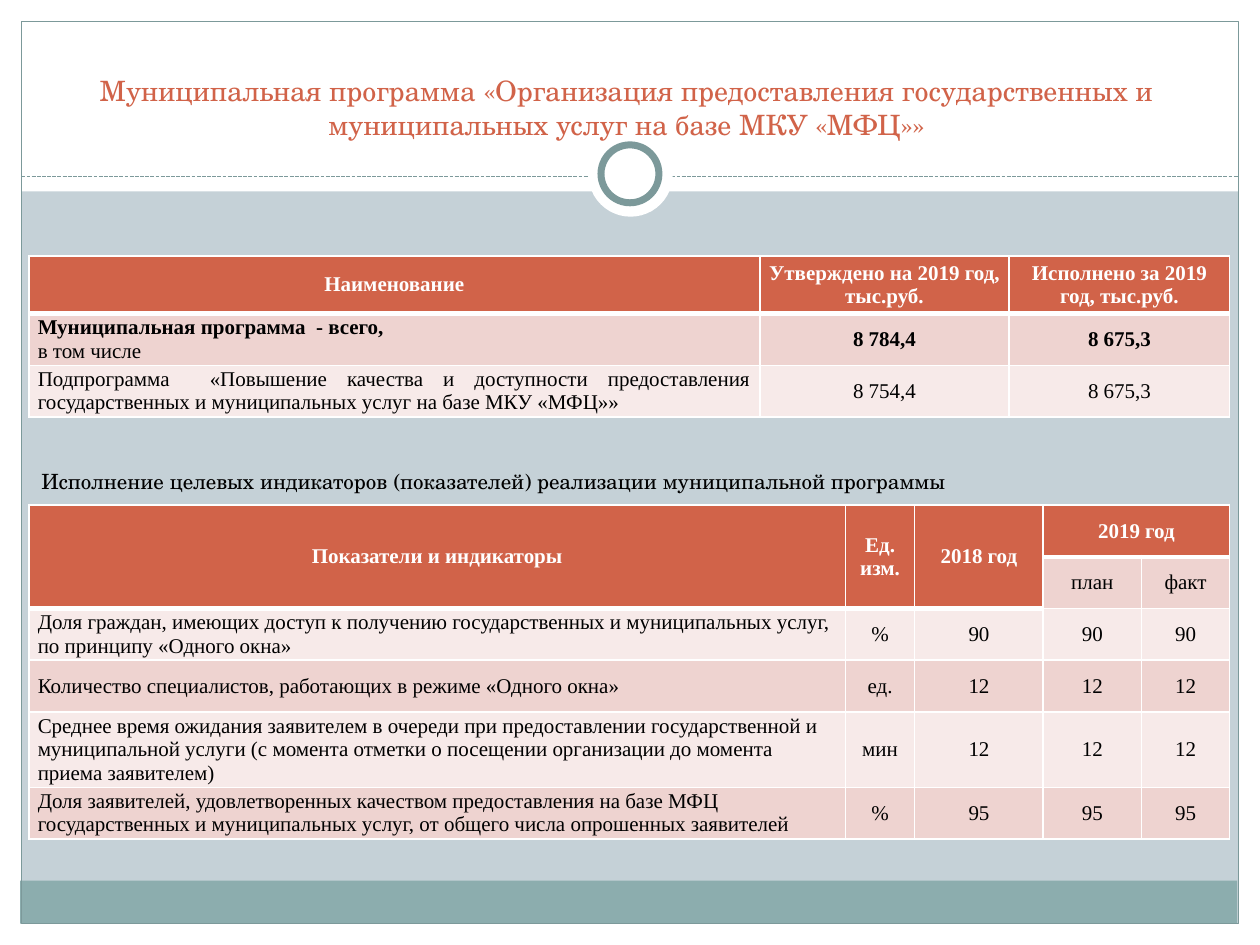
from dataclasses import dataclass, field
from typing import Optional

from lxml import etree
from pptx import Presentation
from pptx.dml.color import RGBColor
from pptx.enum import dml, shapes, text
from pptx.oxml.ns import qn
from pptx.util import Inches, Pt

COLORS = {
    "background": "C5D1D7",
    "white": "FFFFFF",
    "black": "000000",
    "band": "8CADAE",
    "outline": "7C999A",
    "accent": "D16349",
    "odd_row": "EED3D0",
    "even_row": "F7EAE9",
}
HEADING_FONT = "TeX Gyre Schola"
TABLE_FONT = "Times New Roman"
RECT = shapes.MSO_SHAPE.RECTANGLE
OVAL = shapes.MSO_SHAPE.OVAL
ALIGN = text.PP_ALIGN
ANCHOR = text.MSO_ANCHOR


@dataclass
class Panel:
    left: float
    top: float
    width: float
    height: float
    fill: Optional[str] = None
    line: Optional[str] = None
    line_width: float = 0.75
    kind: shapes.MSO_SHAPE = RECT


@dataclass
class Heading:
    words: str
    left: float
    top: float
    width: float
    height: float
    size: float
    color: str
    align: ALIGN = ALIGN.LEFT
    anchor: ANCHOR = ANCHOR.TOP


@dataclass
class Grid:
    top: float
    columns: list[float]
    heights: list[float]
    rows: list[list[str]]
    header: set[tuple[int, int]]
    name_align: ALIGN
    merges: list[tuple[int, int, int, int]] = field(default_factory=list)
    total_row: Optional[int] = None  # its first lines are bold


def rgb(name: str) -> RGBColor:
    return RGBColor.from_string(COLORS[name])


def draw_panel(slide, panel: Panel) -> None:
    shape = slide.shapes.add_shape(panel.kind, Inches(panel.left), Inches(panel.top),
                                   Inches(panel.width), Inches(panel.height))
    shape.shadow.inherit = False
    if panel.fill:
        shape.fill.solid()
        shape.fill.fore_color.rgb = rgb(panel.fill)
    else:
        shape.fill.background()
    if panel.line:
        shape.line.color.rgb = rgb(panel.line)
        shape.line.width = Pt(panel.line_width)
    else:
        shape.line.fill.background()


def draw_divider(slide, left: float, right: float, y: float) -> None:
    divider = slide.shapes.add_connector(shapes.MSO_CONNECTOR.STRAIGHT, Inches(left), Inches(y),
                                         Inches(right), Inches(y))
    divider.line.color.rgb = rgb("outline")
    divider.line.width = Pt(0.75)
    divider.line.dash_style = dml.MSO_LINE.SQUARE_DOT
    etree.SubElement(divider._element.spPr, qn("a:effectLst"))


def style_line(paragraph, font: str, size: float, color: str, align: ALIGN,
               bold: bool = False) -> None:
    paragraph.alignment = align
    for run in paragraph.runs:
        run.font.name = font
        run.font.size = Pt(size)
        run.font.bold = bold
        run.font.color.rgb = rgb(color)


def draw_heading(slide, heading: Heading) -> None:
    box = slide.shapes.add_textbox(Inches(heading.left), Inches(heading.top),
                                   Inches(heading.width), Inches(heading.height))
    frame = box.text_frame
    frame.word_wrap = True
    frame.vertical_anchor = heading.anchor
    frame.text = heading.words
    style_line(frame.paragraphs[0], HEADING_FONT, heading.size, heading.color, heading.align)


def set_borders(cell, top: float, bottom: float) -> None:
    properties = cell._tc.get_or_add_tcPr()
    for side, width in (("L", 1), ("R", 1), ("T", top), ("B", bottom)):
        border = etree.SubElement(properties, qn(f"a:ln{side}"), w=str(Pt(width)))
        fill = etree.SubElement(border, qn("a:solidFill"))
        etree.SubElement(fill, qn("a:srgbClr"), val=COLORS["white"])


def draw_grid(slide, grid: Grid) -> None:
    table = slide.shapes.add_table(
        len(grid.heights), len(grid.columns), Inches(0.23), Inches(grid.top),
        Inches(sum(grid.columns)), Inches(sum(grid.heights))).table
    table.first_row = table.horz_banding = False
    for column, width in zip(table.columns, grid.columns):
        column.width = Inches(width)
    for row, height in zip(table.rows, grid.heights):
        row.height = Inches(height)

    for r, words_in_row in enumerate(grid.rows):
        for c, words in enumerate(words_in_row):
            cell = table.cell(r, c)
            is_header = (r, c) in grid.header
            below_header = (r - 1, c) in grid.header
            set_borders(cell, 3 if below_header else 1, 3 if is_header else 1)
            cell.fill.solid()
            cell.fill.fore_color.rgb = rgb(
                "accent" if is_header else "odd_row" if r % 2 else "even_row")
            cell.vertical_anchor = ANCHOR.MIDDLE
            cell.margin_left = cell.margin_right = Inches(0.07)
            cell.margin_top = cell.margin_bottom = 0
            cell.text_frame.text = words
            align = ALIGN.CENTER if is_header or c else grid.name_align
            for i, paragraph in enumerate(cell.text_frame.paragraphs):
                bold = is_header or (r == grid.total_row and i == 0)
                style_line(paragraph, TABLE_FONT, 12, "white" if is_header else "black",
                           align, bold)
    for r1, c1, r2, c2 in grid.merges:
        table.cell(r1, c1).merge(table.cell(r2, c2))


FRAME = [
    Panel(0, 7.33, 10, 0.17, "white"),
    Panel(0, 0, 10, 1.52, "white"),
    Panel(0, 0, 0.17, 7.5, "white"),
    Panel(9.83, 0, 0.17, 7.5, "white"),
    Panel(0.16, 6.99, 9.66, 0.34, "band"),
    Panel(0.17, 0.17, 9.66, 7.16, line="outline"),
]
RINGS = [
    Panel(4.67, 1.05, 0.67, 0.67, "white", kind=OVAL),
    Panel(4.77, 1.15, 0.46, 0.46, "white", "outline", 4, OVAL),
]
TITLE = Heading("Муниципальная программа «Организация предоставления государственных и "
                "муниципальных услуг на базе МКУ «МФЦ»»",
                0.31, 0.47, 9.33, 0.7, 16, "accent", ALIGN.CENTER, ANCHOR.BOTTOM)
SUBTITLE = Heading("Исполнение целевых индикаторов (показателей) реализации муниципальной программы",
                   0.23, 3.67, 9.3, 0.39, 12, "black")
BUDGET = Grid(2.03, [5.8, 1.98, 1.75], [0.46, 0.41, 0.41], [
    ["Наименование", "Утверждено на 2019 год, тыс.руб.", "Исполнено за 2019 год, тыс.руб."],
    ["Муниципальная программа  - всего,\nв том числе", "8 784,4", "8 675,3"],
    ["Подпрограмма  «Повышение качества и доступности предоставления государственных и "
     "муниципальных услуг на базе МКУ «МФЦ»»", "8 754,4", "8 675,3"],
], {(0, c) for c in range(3)}, ALIGN.JUSTIFY, total_row=1)
INDICATORS = Grid(4.01, [6.48, 0.55, 1.02, 0.78, 0.7], [0.41, 0.41, 0.41, 0.41, 0.56, 0.41], [
    ["Показатели и индикаторы", "Ед.\nизм.", "2018 год", "2019 год", ""],
    ["", "", "", "план", "факт"],
    ["Доля граждан, имеющих доступ к получению государственных и муниципальных услуг, "
     "по принципу «Одного окна»", "%", "90", "90", "90"],
    ["Количество специалистов, работающих в режиме «Одного окна»", "ед.", "12", "12", "12"],
    ["Среднее время ожидания заявителем в очереди при предоставлении государственной и "
     "муниципальной услуги (с момента отметки о посещении организации до момента приема "
     "заявителем)", "мин", "12", "12", "12"],
    ["Доля заявителей, удовлетворенных качеством предоставления на базе МФЦ государственных "
     "и муниципальных услуг, от общего числа опрошенных заявителей", "%", "95", "95", "95"],
], {(0, c) for c in range(5)} | {(1, c) for c in range(3)}, ALIGN.LEFT,
    merges=[(0, c, 1, c) for c in range(3)] + [(0, 3, 0, 4)])


def main() -> None:
    deck = Presentation()
    deck.slide_width, deck.slide_height = Inches(10), Inches(7.5)
    slide = deck.slides.add_slide(deck.slide_layouts[6])
    slide.background.fill.solid()
    slide.background.fill.fore_color.rgb = rgb("background")

    # Frame, divider and ring
    for panel in FRAME:
        draw_panel(slide, panel)
    draw_divider(slide, 0.17, 9.83, 1.4)
    for ring in RINGS:
        draw_panel(slide, ring)

    # Headings, each with its table
    for heading, grid in ((TITLE, BUDGET), (SUBTITLE, INDICATORS)):
        draw_heading(slide, heading)
        draw_grid(slide, grid)
    deck.save("out.pptx")


if __name__ == "__main__":
    main()
